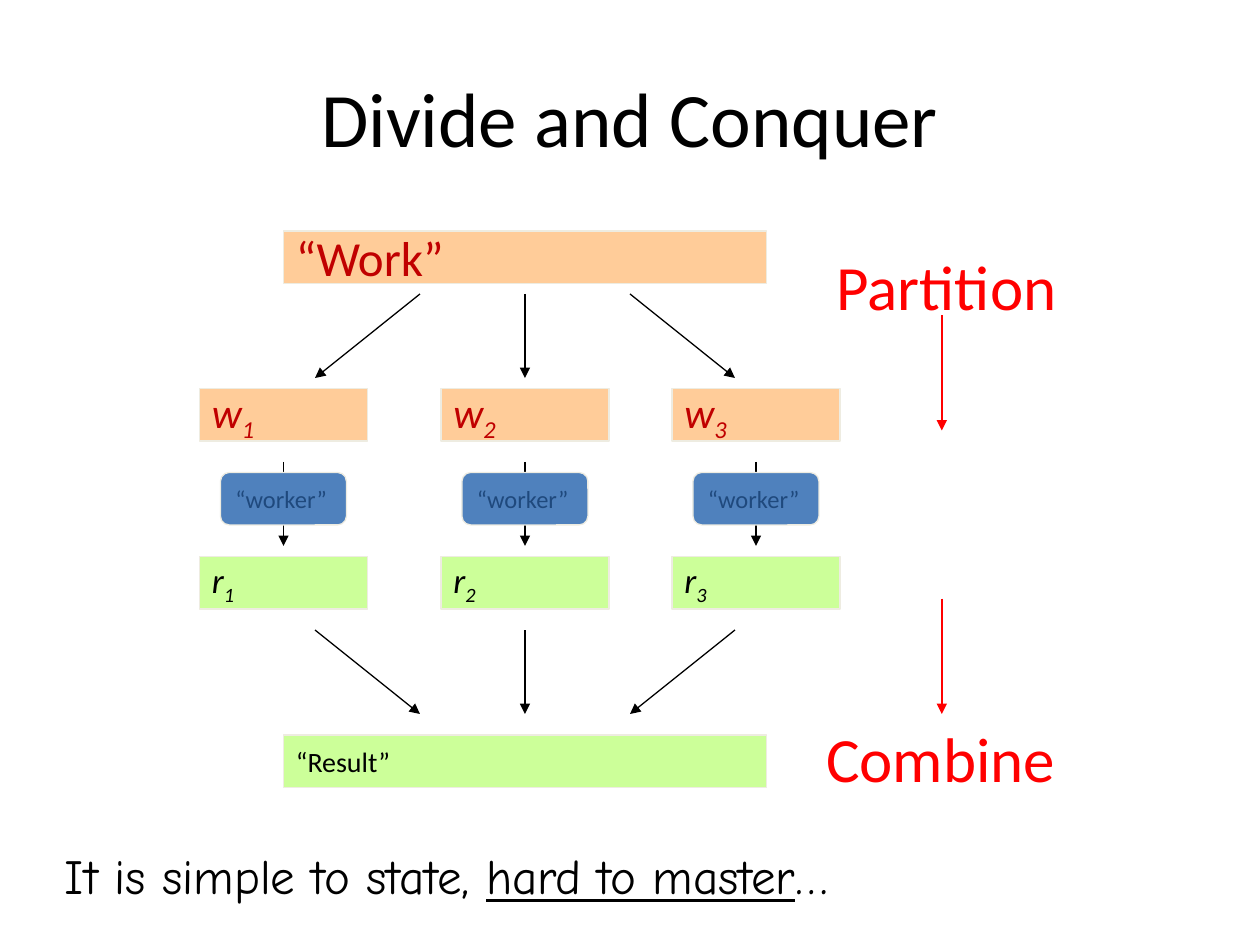
from pptx import Presentation
from pptx import util as u
from pptx.dml.color import RGBColor
from pptx.enum import shapes, text
from pptx.oxml.ns import qn
from lxml import etree

COLUMNS, ROWS = 120, 90
ORANGE, GREEN, BLUE = "FFCC99", "CCFF99", "4F81BD"
BLACK, RED, DARK_RED, NAVY, EDGE = "000000", "FF0000", "C00000", "1F497D", "EEECE1"


def color(value):
    return RGBColor.from_string(value)


class Board:
    """Draws on one slide, measured in grid columns and rows."""

    def __init__(self, deck):
        self.page = deck.slides.add_slide(deck.slide_layouts[6])
        self.column = deck.slide_width / COLUMNS
        self.row = deck.slide_height / ROWS

    def place(self, across, down):
        return round(across * self.column), round(down * self.row)

    def add_text(self, shape, parts, size, ink, font="Calibri", anchor=text.MSO_ANCHOR.MIDDLE):
        """Add one left-aligned paragraph with a run for each part; return it."""
        frame = shape.text_frame
        frame.word_wrap = True
        frame.vertical_anchor = anchor
        para = frame.paragraphs[0]
        para.alignment = text.PP_ALIGN.LEFT
        for part in parts:
            span = para.add_run()
            span.text = part
            span.font.name = font
            span.font.size = u.Pt(size)
            span.font.color.rgb = color(ink)
        return para

    def label(self, left, top, width, height, parts, size, ink, **style):
        box = self.page.shapes.add_textbox(*self.place(left, top), *self.place(width, height))
        return self.add_text(box, parts, size, ink, **style)

    def block(self, left, top, width, parts, size, ink, fill, kind=shapes.MSO_SHAPE.RECTANGLE):
        box = self.page.shapes.add_shape(kind, *self.place(left, top), *self.place(width, 5))
        box.shadow.inherit = False
        box.fill.solid()
        box.fill.fore_color.rgb = color(fill)
        box.line.color.rgb = color(EDGE)
        box.line.width = u.Pt(0.75)
        return self.add_text(box, parts, size, ink)

    def indexed(self, left, top, letter, number, size, ink, fill):
        """Draw a block holding an italic letter with a subscript number."""
        para = self.block(left, top, 16, [letter, str(number)], size, ink, fill)
        for span in para.runs:
            span.font.italic = True
        para.runs[1].font._element.set("baseline", "-25000")

    def arrow(self, start, end, ink=BLACK, width=0.75):
        line = self.page.shapes.add_connector(
            shapes.MSO_CONNECTOR.STRAIGHT, *self.place(*start), *self.place(*end))
        line.line.color.rgb = color(ink)
        line.line.width = u.Pt(width)
        outline = line._element.spPr.find(qn("a:ln"))
        etree.SubElement(outline, qn("a:tailEnd"), type="triangle")
        etree.SubElement(line._element.spPr, qn("a:effectLst"))


def main():
    deck = Presentation()
    deck.slide_width, deck.slide_height = u.Inches(10), u.Inches(7.5)
    board = Board(deck)

    title = board.label(6, 3.6, 108, 15, ["Divide and Conquer"], 44, BLACK)
    title.alignment = text.PP_ALIGN.CENTER

    board.block(27, 22, 46, ["“Work”"], 28, DARK_RED, ORANGE)
    board.block(27, 70, 46, ["“Result”"], 16, BLACK, GREEN)

    for number, left in enumerate((19, 42, 64), start=1):
        middle = left + 8
        inner, outer = 50 + 10 * (number - 2), 50 + 20 * (number - 2)
        board.indexed(left, 37, "w", number, 24, DARK_RED, ORANGE)
        board.indexed(left, 53, "r", number, 20, BLACK, GREEN)
        board.arrow((inner, 28), (outer, 36))
        board.arrow((middle, 44), (middle, 52))
        board.arrow((outer, 60), (inner, 68))
        board.block(left + 2, 45, 12, ["“worker”"], 14, NAVY, BLUE,
                    shapes.MSO_SHAPE.ROUNDED_RECTANGLE)

    top = text.MSO_ANCHOR.TOP
    board.label(78.5, 23, 23.7, 8.5, ["Partition"], 36, RED, anchor=top)
    board.label(77.5, 67.9, 24.7, 8.5, ["Combine"], 36, RED, anchor=top)
    for start in (30, 57):
        board.arrow((89.7, start), (89.7, start + 11), RED, 1.5)

    closing = board.label(5, 79.9, 87, 6.8, ["It is simple to state, ", "hard to master", "…"],
                          28, BLACK, font="Comic Neue", anchor=top)
    closing.space_before = u.Pt(5.6)
    closing.runs[1].font.underline = True

    deck.save("out.pptx")


if __name__ == "__main__":
    main()
